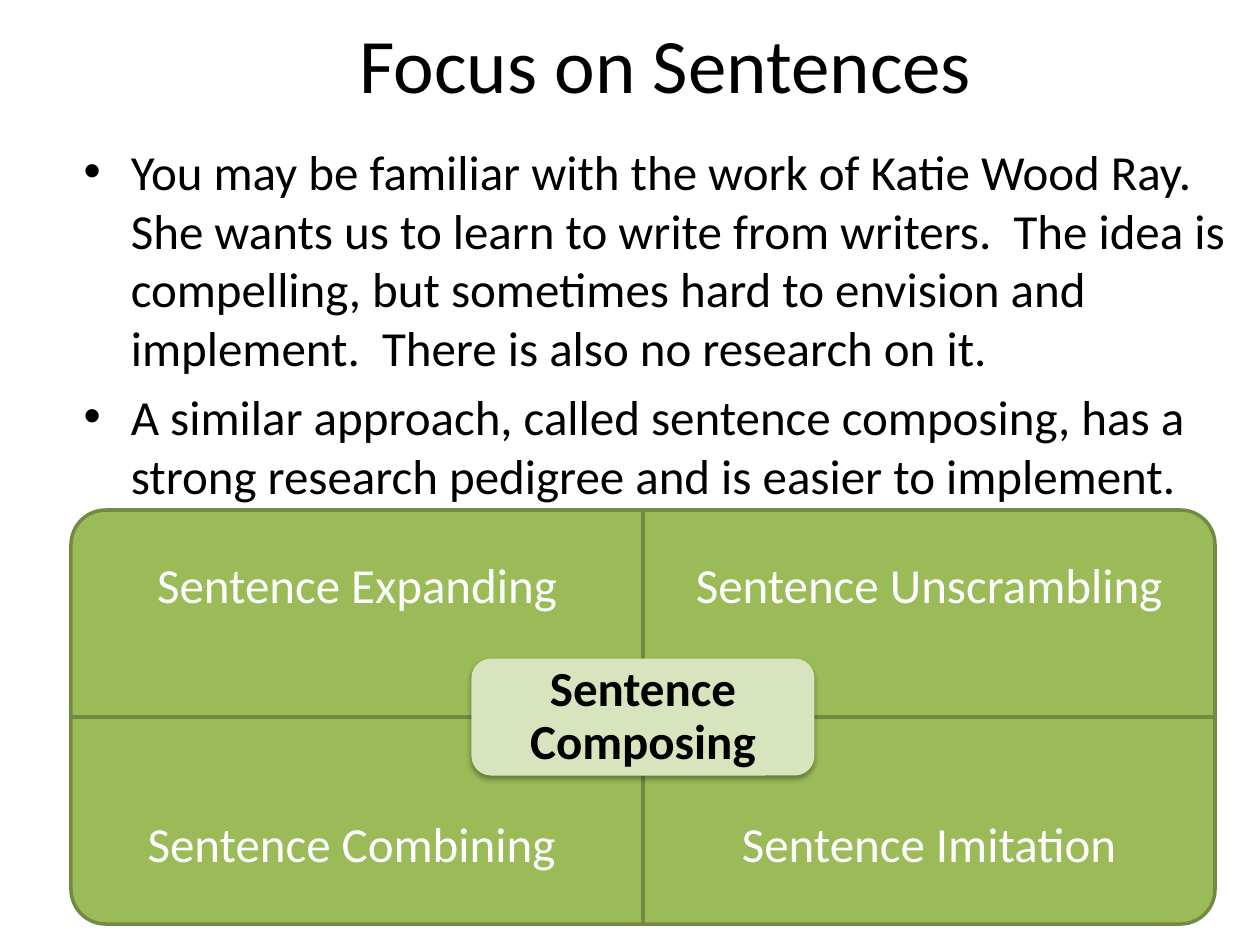
from lxml import etree
from pptx import Presentation
from pptx.dml.color import RGBColor
from pptx.enum.shapes import MSO_SHAPE
from pptx.enum.text import MSO_ANCHOR, PP_ALIGN
from pptx.oxml.ns import qn
from pptx.util import Emu, Pt

ROUND_ONE, ROUND_ALL = MSO_SHAPE.ROUND_1_RECTANGLE, MSO_SHAPE.ROUNDED_RECTANGLE
TOP, MIDDLE = MSO_ANCHOR.TOP, MSO_ANCHOR.MIDDLE
CENTER = PP_ALIGN.CENTER

# Content
TITLE = "Focus on Sentences"
POINTS = [
    "You may be familiar with the work of Katie Wood Ray. She wants us to learn "
    "to write from writers.  The idea is compelling, but sometimes hard to "
    "envision and implement.  There is also no research on it.",
    "A similar approach, called sentence composing, has a strong research "
    "pedigree and is easier to implement.",
]
HUB = "Sentence Composing"
CELLS = [  # label, column, row, turn of the rounded corner
    ("Sentence Expanding", 0, 0, 270),
    ("Sentence Unscrambling", 1, 0, 0),
    ("Sentence Combining ", 0, 1, 180),
    ("Sentence Imitation", 1, 1, 90),
]

# Layout in px
LEFT, TOP_Y = 71, 510
CELL_W, CELL_H, LABEL_H = 572, 207, 155
HUB_W, HUB_H = 343, 117
GREEN, EDGE, PALE = "9BBB59", "738A42", "D7E4BD"
BLACK, WHITE = "000000", "FFFFFF"


def px(n):
    return Emu(round(n * 914400 / 126))


def color(code):
    return RGBColor.from_string(code)


def place(shape, x, y, w, h):
    shape.left, shape.top, shape.width, shape.height = map(px, (x, y, w, h))


def style(par, size, code, bold=False):
    par.font.name, par.font.size, par.font.bold = "Calibri", Pt(size), bold
    par.font.color.rgb = color(code)


def label(shape, text, inset, code, bold=False):
    frame = shape.text_frame
    frame.word_wrap, frame.vertical_anchor = True, MIDDLE
    frame.margin_left = frame.margin_right = px(inset)
    frame.margin_top = frame.margin_bottom = px(inset)
    par = frame.paragraphs[0]
    par.text, par.alignment, par.line_spacing = text, CENTER, 0.9
    style(par, 28, code, bold)


def block(shapes, kind, box, fill):
    shape = shapes.add_shape(kind, *map(px, box))
    shape.shadow.inherit = False
    shape.fill.solid()
    shape.fill.fore_color.rgb = color(fill)
    return shape


def shade(shape):
    effects = shape._element.spPr.find(qn("a:effectLst"))
    drop = etree.SubElement(effects, qn("a:outerShdw"), blurRad="40000",
                            dist="23000", dir="5400000", rotWithShape="0")
    tone = etree.SubElement(drop, qn("a:srgbClr"), val=BLACK)
    etree.SubElement(tone, qn("a:alpha"), val="35000")


deck = Presentation()
deck.slide_width, deck.slide_height = px(1260), px(945)
slide = deck.slides.add_slide(deck.slide_layouts[1])

# Title
title = slide.shapes.title
place(title, 149, 10, 1033, 158)
title.text_frame.text = TITLE
title.text_frame.vertical_anchor = TOP
style(title.text_frame.paragraphs[0], 44, BLACK)

# Bullet points
body = slide.placeholders[1]
place(body, LEFT, 135, 1186, 375)
body.text_frame.text = "\n".join(POINTS)
for par in body.text_frame.paragraphs:
    style(par, 28, BLACK)

# Four cells, each turned about its centre so the round corner faces out
group = slide.shapes.add_group_shape().shapes
for text, col, row, turn in CELLS:
    x, y = LEFT + col * CELL_W, TOP_Y + row * CELL_H
    w, h = (CELL_H, CELL_W) if turn % 180 else (CELL_W, CELL_H)
    box = (x + (CELL_W - w) / 2, y + (CELL_H - h) / 2, w, h)
    cell = block(group, ROUND_ONE, box, GREEN)
    cell.rotation = turn
    cell.line.color.rgb, cell.line.width = color(EDGE), Pt(2)
    drop = row * (CELL_H - LABEL_H)
    note = group.add_textbox(*map(px, (x, y + drop, CELL_W, LABEL_H)))
    label(note, text, 28, WHITE)

# Hub in the middle
box = (LEFT + CELL_W - HUB_W / 2, TOP_Y + CELL_H - HUB_H / 2, HUB_W, HUB_H)
hub = block(group, ROUND_ALL, box, PALE)
hub.line.fill.background()
shade(hub)
label(hub, HUB, 21, BLACK, True)

deck.save("out.pptx")
